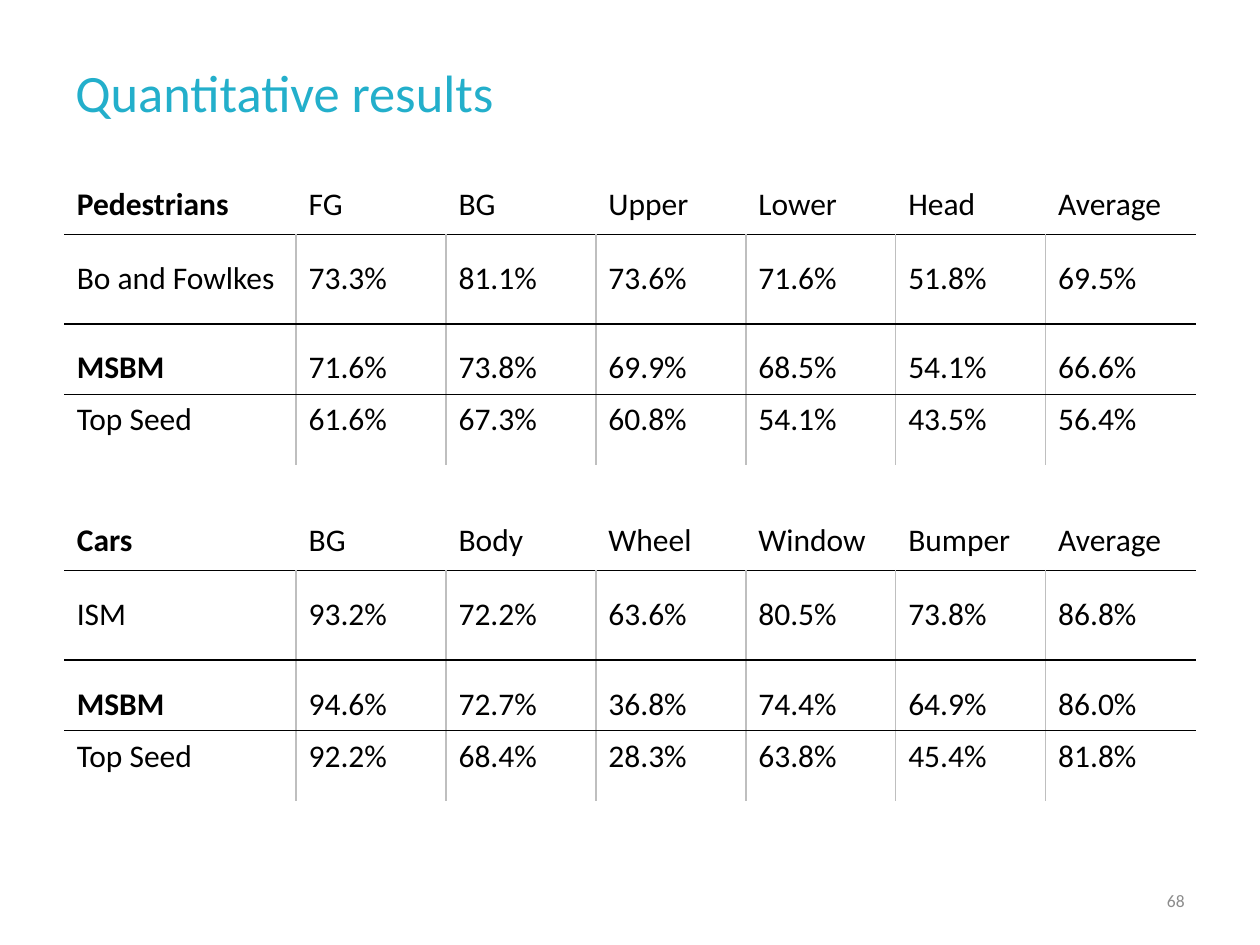
from dataclasses import dataclass

import lxml.etree
import pptx
import pptx.dml.color
import pptx.enum.text
import pptx.oxml.ns
import pptx.util

Inches = pptx.util.Inches
Pt = pptx.util.Pt
ANCHOR = pptx.enum.text.MSO_ANCHOR
ALIGN = pptx.enum.text.PP_ALIGN
qn = pptx.oxml.ns.qn

TEAL = pptx.dml.color.RGBColor(0x23, 0xAF, 0xCB)
GRAY = pptx.dml.color.RGBColor(0x8C, 0x8C, 0x8C)
RULE_GRAY = pptx.dml.color.RGBColor(0xBF, 0xBF, 0xBF)
BLACK = pptx.dml.color.RGBColor(0, 0, 0)
FONT = "Calibri"
NO_STYLE = "{2D5ABB26-0587-4C30-8999-92F81FD0307C}"
LABEL_WIDTH, SCORE_WIDTH = 1.84, 1.19


@dataclass
class RowStyle:
    height: float
    inset_top: float
    inset_bottom: float
    rule_above: bool
    rule_below: bool
    column_rules: bool
    bold_label: bool
    anchor: ANCHOR


ROW_STYLES = [
    RowStyle(0.47, 0.05, 0.05, False, True, False, True, ANCHOR.MIDDLE),
    RowStyle(0.71, 0.2, 0.2, True, True, True, False, ANCHOR.TOP),
    RowStyle(0.56, 0.2, 0.05, True, False, True, True, ANCHOR.TOP),
    RowStyle(0.56, 0.05, 0.2, False, False, True, False, ANCHOR.TOP),
]


@dataclass
class Results:
    top: float
    rows: list[list[str]]


PEDESTRIANS = Results(1.39, [
    ["Pedestrians", "FG", "BG", "Upper", "Lower", "Head", "Average"],
    ["Bo and Fowlkes", "73.3%", "81.1%", "73.6%", "71.6%", "51.8%", "69.5%"],
    ["MSBM", "71.6%", "73.8%", "69.9%", "68.5%", "54.1%", "66.6%"],
    ["Top Seed", "61.6%", "67.3%", "60.8%", "54.1%", "43.5%", "56.4%"],
])
CARS = Results(4.06, [
    ["Cars", "BG", "Body", "Wheel", "Window", "Bumper", "Average"],
    ["ISM", "93.2%", "72.2%", "63.6%", "80.5%", "73.8%", "86.8%"],
    ["MSBM", "94.6%", "72.7%", "36.8%", "74.4%", "64.9%", "86.0%"],
    ["Top Seed", "92.2%", "68.4%", "28.3%", "63.8%", "45.4%", "81.8%"],
])


def format_text(frame, size: float, color, bold: bool = False) -> None:
    for run in frame.paragraphs[0].runs:
        run.font.name = FONT
        run.font.size = Pt(size)
        run.font.bold = bold
        run.font.color.rgb = color


def add_label(slide, text: str, box: tuple, size: float, color, align) -> None:
    label = slide.shapes.add_textbox(*map(Inches, box)).text_frame
    label.word_wrap = True
    label.vertical_anchor = ANCHOR.MIDDLE
    label.text = text
    label.paragraphs[0].alignment = align
    format_text(label, size, color)


def add_border(cell, side: str, color) -> None:
    properties = cell._tc.get_or_add_tcPr()
    line = lxml.etree.SubElement(properties, qn(f"a:ln{side}"), w=str(Pt(1)))
    fill = lxml.etree.SubElement(line, qn("a:solidFill"))
    lxml.etree.SubElement(fill, qn("a:srgbClr"), val=str(color))


def style_cell(cell, style: RowStyle, column: int, last: int) -> None:
    cell.margin_top = Inches(style.inset_top)
    cell.margin_bottom = Inches(style.inset_bottom)
    cell.vertical_anchor = style.anchor
    borders = [
        ("L", style.column_rules and column > 0, RULE_GRAY),
        ("R", style.column_rules and column < last, RULE_GRAY),
        ("T", style.rule_above, BLACK),
        ("B", style.rule_below, BLACK),
    ]
    for side, drawn, color in borders:
        if drawn:
            add_border(cell, side, color)
    cell.fill.background()
    format_text(cell.text_frame, 18, BLACK, style.bold_label and column == 0)


def add_results(slide, results: Results) -> None:
    widths = [LABEL_WIDTH] + [SCORE_WIDTH] * (len(results.rows[0]) - 1)
    height = sum(style.height for style in ROW_STYLES)
    frame = slide.shapes.add_table(
        len(results.rows), len(widths), Inches(0.51), Inches(results.top),
        Inches(sum(widths)), Inches(height))
    next(frame._element.iter(qn("a:tableStyleId"))).text = NO_STYLE
    scores = frame.table
    scores.horz_banding = False
    for column, width in zip(scores.columns, widths):
        column.width = Inches(width)
    for row, style, texts in zip(scores.rows, ROW_STYLES, results.rows):
        row.height = Inches(style.height)
        for index, (cell, text) in enumerate(zip(row.cells, texts)):
            cell.text_frame.text = text
            style_cell(cell, style, index, len(widths) - 1)


def main() -> None:
    deck = pptx.Presentation()
    deck.slide_width = Inches(10)
    deck.slide_height = Inches(7.5)
    slide = deck.slides.add_slide(deck.slide_layouts[6])
    add_label(slide, "Quantitative results", (0.5, 0.3, 9, 0.85), 30, TEAL, ALIGN.LEFT)
    add_label(slide, "68", (7.17, 6.95, 2.33, 0.4), 10, GRAY, ALIGN.RIGHT)
    for results in (PEDESTRIANS, CARS):
        add_results(slide, results)
    deck.save("out.pptx")


if __name__ == "__main__":
    main()
